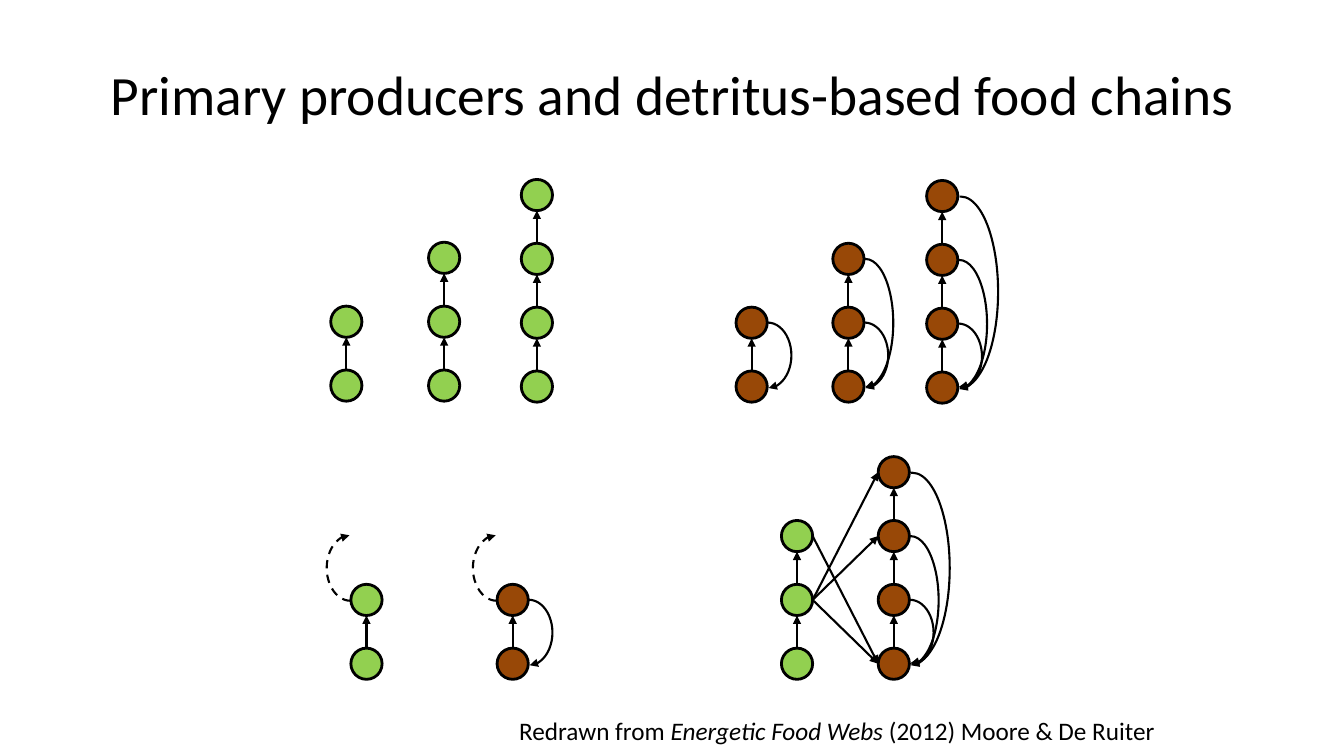
from pptx import Presentation
from pptx.dml.color import RGBColor
from pptx.enum.dml import MSO_LINE as Dash
from pptx.enum.shapes import MSO_CONNECTOR as Conn, MSO_SHAPE as Shape
from pptx.enum.text import MSO_ANCHOR as Anchor, MSO_AUTO_SIZE as Fit, PP_ALIGN as Align
from pptx.oxml.ns import qn
from pptx.util import Inches, Pt
from lxml import etree

TITLE = "Primary producers and detritus-based food chains"
CREDIT = [("Redrawn from ", False), ("Energetic Food Webs ", True),
          ("(2012) Moore & De Ruiter", False)]
GREEN, BROWN, BLACK = "92D050", "984807", "000000"
FONT = "Calibri"

# Each web: its chains as (colour, left, top of lowest node, nodes, open end),
# then cross links as (from level, to level) between its two chains
WEBS = [
    ([(GREEN, 3.28, 3.67, 2, False), (GREEN, 4.25, 3.67, 3, False),
      (GREEN, 5.17, 3.68, 4, False)], []),
    ([(BROWN, 7.3, 3.68, 2, False), (BROWN, 8.26, 3.68, 3, False),
      (BROWN, 9.19, 3.69, 4, False)], []),
    ([(GREEN, 3.48, 6.43, 2, True), (BROWN, 4.93, 6.43, 2, True)], []),
    ([(GREEN, 7.75, 6.43, 3, False), (BROWN, 8.71, 6.43, 4, False)],
     [(1, 0), (2, 0), (1, 3), (1, 2)]),
]
# Return loops by level: shift from the lowest node, size, start and end angle
LOOPS = [
    (0.08, -0.48, 0.47, 0.65, 162, 53.02),
    (0.05, -1.11, 0.55, 1.27, 161.54, 54.04),
    (-0.03, -1.74, 0.74, 1.89, 161.54, 54.71),
]
OPEN = (-0.24, -1.12, 0.47, 0.65, 162, 53.02)
NODE = 0.31
STEP = 1.9 / 3


def color(code):
    return RGBColor.from_string(code)


def ink(item, width):
    item.line.color.rgb = color(BLACK)
    item.line.width = Pt(width)


def tip(item):
    end = etree.SubElement(item.line._get_or_add_ln(), qn("a:tailEnd"))
    end.set("type", "triangle")


def node(group, x, y, fill):
    dot = group.shapes.add_shape(Shape.OVAL, *map(Inches, (x, y, NODE, NODE)))
    dot.shadow.inherit = False
    dot.fill.solid()
    dot.fill.fore_color.rgb = color(fill)
    ink(dot, 2)


def arrow(group, *ends):
    link = group.shapes.add_connector(Conn.STRAIGHT, *map(Inches, ends))
    ink(link, 1.5)
    tip(link)
    etree.SubElement(link._element.spPr, qn("a:effectLst"))


def loop(group, x, y, curve, dashed=False):
    dx, dy, wide, high, start, stop = curve
    arc = group.shapes.add_shape(
        Shape.ARC, *map(Inches, (x + dx, y + dy, wide, high)))
    arc.adjustments[0], arc.adjustments[1] = start, stop
    arc.shadow.inherit = False
    arc.fill.background()
    ink(arc, 1.5)
    if dashed:
        arc.rotation = 180
        arc.line.dash_style = Dash.DASH
    tip(arc)


def chain(group, fill, x, y, count, is_open):
    mid = x + NODE / 2
    for level in range(count):
        top = y - level * STEP
        node(group, x, top, fill)
        if level:
            arrow(group, mid, top + STEP, mid, top + NODE)
    if fill == BROWN:
        for curve in LOOPS[:count - 1]:
            loop(group, x, y, curve)
    if is_open:
        loop(group, x, y, OPEN, True)


def write(para, text, size, italic=False):
    run = para.add_run()
    run.text = text
    run.font.name = FONT
    run.font.size = Pt(size)
    run.font.italic = italic
    run.font.color.rgb = color(BLACK)


def main():
    deck = Presentation()
    deck.slide_width, deck.slide_height = Inches(13.33), Inches(7.5)
    slide = deck.slides.add_slide(deck.slide_layouts[5])

    # Title
    title = slide.shapes.title
    title.left, title.top = Inches(0.67), Inches(0.3)
    title.width, title.height = Inches(12), Inches(1.25)
    frame = title.text_frame
    frame.auto_size = Fit.NONE
    frame.vertical_anchor = Anchor.MIDDLE
    frame.paragraphs[0].alignment = Align.CENTER
    write(frame.paragraphs[0], TITLE, 39.6)

    # Food webs, one group each
    for chains, links in WEBS:
        group = slide.shapes.add_group_shape()
        for part in chains:
            chain(group, *part)
        for low, high in links:
            (_, x1, y1, *_), (_, x2, y2, *_) = chains
            arrow(group, x1 + NODE, y1 - low * STEP + NODE / 2,
                  x2, y2 - high * STEP + NODE / 2)

    # Credit line
    box = slide.shapes.add_textbox(*map(Inches, (1.94, 7.05, 9.61, 0.4)))
    frame = box.text_frame
    frame.word_wrap = True
    frame.auto_size = Fit.SHAPE_TO_FIT_TEXT
    frame.paragraphs[0].alignment = Align.RIGHT
    for text, italic in CREDIT:
        write(frame.paragraphs[0], text, 18, italic)

    deck.save("out.pptx")


if __name__ == "__main__":
    main()
